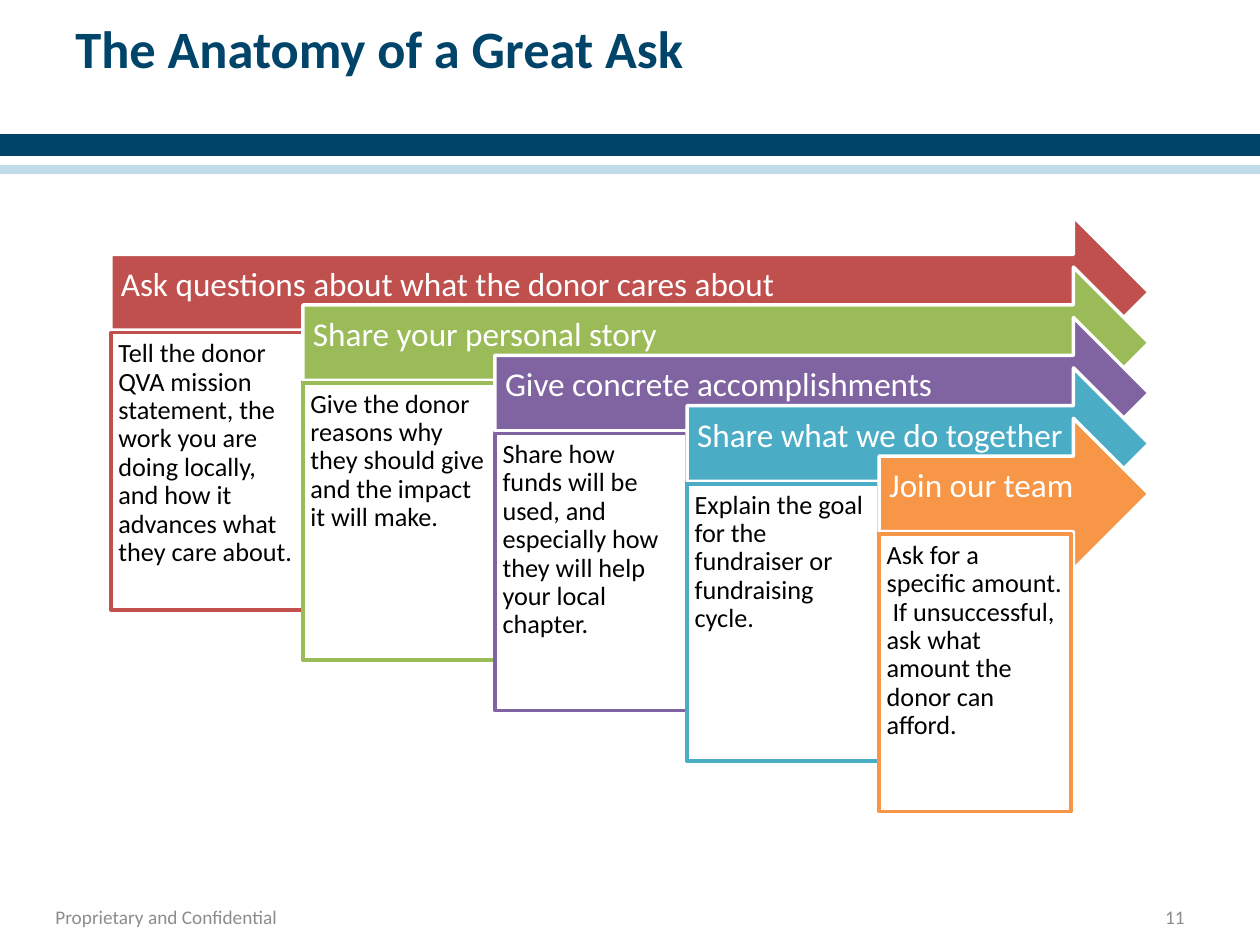
from dataclasses import dataclass

from pptx import Presentation
from pptx.dml.color import RGBColor
from pptx.enum.shapes import MSO_SHAPE
from pptx.enum.text import MSO_ANCHOR, PP_ALIGN
from pptx.shapes.autoshape import Shape
from pptx.slide import Slide
from pptx.util import Inches, Pt

FONT = "Calibri"
NAVY = RGBColor(0x00, 0x44, 0x6A)
PALE_BLUE = RGBColor(0xC2, 0xDB, 0xE8)
WHITE = RGBColor(0xFF, 0xFF, 0xFF)
BLACK = RGBColor(0x00, 0x00, 0x00)
GREY = RGBColor(0x8C, 0x8C, 0x8C)
RED = RGBColor(0xC0, 0x50, 0x4D)
GREEN = RGBColor(0x9B, 0xBB, 0x59)
PURPLE = RGBColor(0x80, 0x64, 0xA2)
TEAL = RGBColor(0x4B, 0xAC, 0xC6)
ORANGE = RGBColor(0xF7, 0x96, 0x46)

SLIDE_WIDTH, SLIDE_HEIGHT = 10, 7.5
STAIR_LEFT, STAIR_TOP, STAIR_WIDTH = 0.88, 1.72, 8.24
COLUMN = STAIR_WIDTH * 18.5 / 100
ROW = 0.4
ARROW_HEIGHT = 3 * ROW
DETAIL_DROP, DETAIL_HEIGHT = 2.3 * ROW, 5.5 * ROW


@dataclass(frozen=True)
class Box:
    left: float
    top: float
    width: float
    height: float

    def emu(self) -> list[int]:
        return [Inches(n) for n in (self.left, self.top, self.width, self.height)]


@dataclass(frozen=True)
class Style:
    size: float
    color: RGBColor
    bold: bool = False
    align: PP_ALIGN = PP_ALIGN.LEFT
    anchor: MSO_ANCHOR = MSO_ANCHOR.TOP
    spacing: float = 1.0
    insets: tuple[float, float, float, float] = (0.1, 0.05, 0.1, 0.05)


@dataclass(frozen=True)
class Step:
    heading: str
    detail: str
    color: RGBColor


TITLE = Style(30, NAVY, bold=True)
FOOTER = Style(11, GREY, anchor=MSO_ANCHOR.MIDDLE, insets=(0.11, 0.06, 0.11, 0.06))
PAGE_NUMBER = Style(11, GREY, align=PP_ALIGN.RIGHT, anchor=MSO_ANCHOR.MIDDLE)
HEADING = Style(19, WHITE, anchor=MSO_ANCHOR.MIDDLE, spacing=0.9,
                insets=(0.08, 0.08, 0.28, 0.19))
DETAIL = Style(15, BLACK, spacing=0.9, insets=(0.06, 0.06, 0.06, 0.06))

BANDS = [
    (Box(0, 1.08, SLIDE_WIDTH, 0.25), NAVY),
    (Box(0, 1.25, SLIDE_WIDTH, 0.05), WHITE),
    (Box(0, 1.32, SLIDE_WIDTH, 0.05), PALE_BLUE),
]

STEPS = [
    Step("Ask questions about what the donor cares about",
         "Tell the donor QVA mission statement, the work you are doing locally, "
         "and how it advances what they care about.", RED),
    Step("Share your personal story",
         "Give the donor reasons why they should give and the impact it will make.",
         GREEN),
    Step("Give concrete accomplishments",
         "Share how funds will be used, and especially how they will help your "
         "local chapter.", PURPLE),
    Step("Share what we do together",
         "Explain the goal for the fundraiser or fundraising cycle.", TEAL),
    Step("Join our team",
         "Ask for a specific amount.  If unsuccessful, ask what amount the donor "
         "can afford.", ORANGE),
]


def write(shape: Shape, text: str, style: Style) -> None:
    frame = shape.text_frame
    frame.word_wrap = True
    frame.vertical_anchor = style.anchor
    (frame.margin_left, frame.margin_top,
     frame.margin_right, frame.margin_bottom) = map(Inches, style.insets)
    paragraph = frame.paragraphs[0]
    paragraph.alignment = style.align
    paragraph.line_spacing = style.spacing
    run = paragraph.add_run()
    run.text = text
    run.font.name = FONT
    run.font.size = Pt(style.size)
    run.font.bold = style.bold
    run.font.color.rgb = style.color


def add_text(slide: Slide, box: Box, text: str, style: Style) -> None:
    write(slide.shapes.add_textbox(*box.emu()), text, style)


def add_filled(slide: Slide, preset: MSO_SHAPE, box: Box,
               fill: RGBColor, line: RGBColor) -> Shape:
    shape = slide.shapes.add_shape(preset, *box.emu())
    shape.shadow.inherit = False
    shape.fill.solid()
    shape.fill.fore_color.rgb = fill
    shape.line.color.rgb = line
    shape.line.width = Pt(2)
    return shape


def add_step(slide: Slide, index: int, step: Step) -> None:
    """Draw one stair: an arrow ending at the shared right edge, its detail below."""
    offset = index * COLUMN
    left, top = STAIR_LEFT + offset, STAIR_TOP + index * ROW
    arrow = add_filled(slide, MSO_SHAPE.RIGHT_ARROW,
                       Box(left, top, STAIR_WIDTH - offset, ARROW_HEIGHT),
                       step.color, WHITE)
    write(arrow, step.heading, HEADING)
    detail = add_filled(slide, MSO_SHAPE.RECTANGLE,
                        Box(left, top + DETAIL_DROP, COLUMN, DETAIL_HEIGHT),
                        WHITE, step.color)
    write(detail, step.detail, DETAIL)


def main() -> None:
    deck = Presentation()
    deck.slide_width, deck.slide_height = Inches(SLIDE_WIDTH), Inches(SLIDE_HEIGHT)
    slide = deck.slides.add_slide(deck.slide_layouts[6])
    for box, color in BANDS:
        add_filled(slide, MSO_SHAPE.RECTANGLE, box, color, color)
    add_text(slide, Box(0.33, 7.1, 2.57, 0.35), "Proprietary and Confidential", FOOTER)
    add_text(slide, Box(0.5, 0.08, 9, 1.25), "The Anatomy of a Great Ask", TITLE)
    add_text(slide, Box(7.17, 7.1, 2.33, 0.35), "11", PAGE_NUMBER)
    for index, step in enumerate(STEPS):
        add_step(slide, index, step)
    deck.save("out.pptx")


if __name__ == "__main__":
    main()
